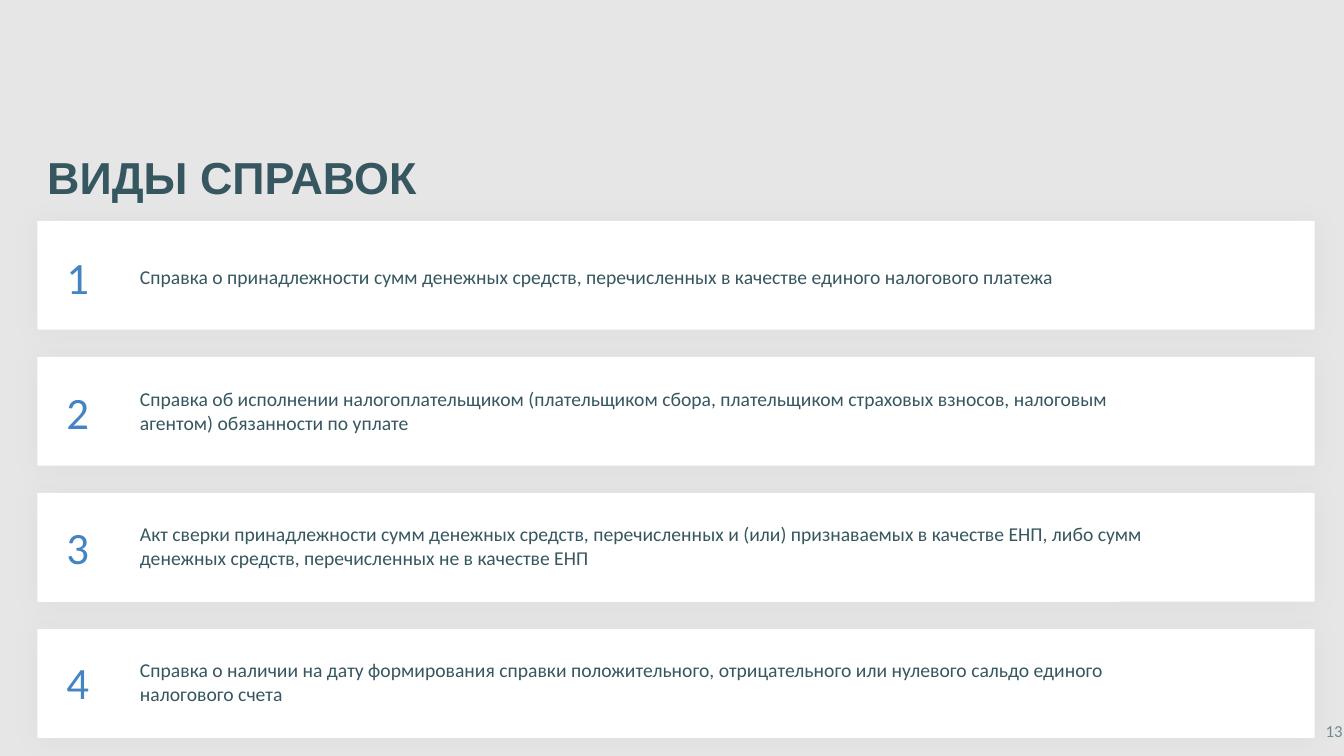
from lxml import etree
from pptx import Presentation
from pptx.dml.color import RGBColor
from pptx.enum.shapes import MSO_SHAPE
from pptx.enum.text import MSO_AUTO_SIZE
from pptx.oxml.ns import qn
from pptx.util import Inches, Pt

ROUNDED = MSO_SHAPE.ROUNDED_RECTANGLE
GROW = MSO_AUTO_SIZE.SHAPE_TO_FIT_TEXT

BACKGROUND = "E7E6E6"
WHITE = "FFFFFF"
SHADOW = "000000"
INK = "365760"
NUMBER_STOPS = ("4484C3", "5FBBD1")

TITLE = {"name": "Arial", "size": Pt(32), "bold": True}
NUMBER = {"name": "Calibri", "size": Pt(32)}
BODY = {"name": "Calibri", "size": Pt(14)}
PAGE = {"name": "Calibri", "size": Pt(12)}

CARD_TOP, CARD_STEP = 2.19, 1.35
NUMBER_TOP, NUMBER_STEP = 2.43, 1.34

CERTIFICATES = [
    ((1.29, 2.58, 10.86, 0.34),
     "Справка о принадлежности сумм денежных средств, перечисленных "
     "в качестве единого налогового платежа"),
    ((1.29, 3.79, 10.34, 0.57),
     "Справка об исполнении налогоплательщиком (плательщиком сбора, "
     "плательщиком страховых взносов, налоговым агентом) "
     "обязанности по уплате"),
    ((1.29, 5.13, 10.34, 0.57),
     "Акт сверки принадлежности сумм денежных средств, перечисленных "
     "и (или) признаваемых в качестве ЕНП, либо сумм денежных средств, "
     "перечисленных не в качестве ЕНП"),
    ((1.29, 6.48, 10.34, 0.57),
     "Справка о наличии на дату формирования справки положительного, "
     "отрицательного или нулевого сальдо единого налогового счета"),
]


def rgb(value):
    """Turn a hex string into a colour."""
    return RGBColor.from_string(value)


class Deck:
    """Holds the style and the current slide."""

    def __init__(self, prs):
        """Add a blank slide with the plain background."""
        self.slide = prs.slides.add_slide(prs.slide_layouts[6])
        fill = self.slide.background.fill
        fill.solid()
        fill.fore_color.rgb = rgb(BACKGROUND)

    def card(self, *box):
        """Draw a white card with a faint soft shadow."""
        sp = self.slide.shapes.add_shape(ROUNDED, *map(Inches, box))
        sp.adjustments[0] = 0.015
        sp.fill.solid()
        sp.fill.fore_color.rgb = rgb(WHITE)
        sp.line.fill.background()
        sp.shadow.inherit = False
        effects = sp.element.spPr.find(qn("a:effectLst"))
        shadow = etree.SubElement(effects, qn("a:outerShdw"), blurRad=str(Pt(20)),
                                  dist=str(Pt(1)), dir="6000000", rotWithShape="0")
        color = etree.SubElement(shadow, qn("a:srgbClr"), val=SHADOW)
        etree.SubElement(color, qn("a:alpha"), val="4000")

    def text(self, box, words, style, color=INK, wrap=True):
        """Write a text box and return its font."""
        sp = self.slide.shapes.add_textbox(*map(Inches, box))
        tf = sp.text_frame
        tf.word_wrap = wrap
        tf.auto_size = GROW
        r = tf.paragraphs[0].add_run()
        r.text = words
        for key, value in style.items():
            setattr(r.font, key, value)
        r.font.color.rgb = rgb(color)
        return r.font

    def number(self, box, words):
        """Write a large number with a vertical gradient."""
        fill = self.text(box, words, NUMBER, wrap=False).fill
        fill.gradient()
        fill.gradient_angle = 270
        for stop, color in zip(fill.gradient_stops, NUMBER_STOPS):
            stop.color.rgb = rgb(color)

    def page_number(self, box, words):
        """Write the translucent page number."""
        font = self.text(box, words, PAGE, wrap=False)
        color = font._element.find(f"{qn('a:solidFill')}/{qn('a:srgbClr')}")
        etree.SubElement(color, qn("a:alpha"), val="65000")


def main():
    """Build the slide and save it."""
    prs = Presentation()
    prs.slide_width, prs.slide_height = Inches(13.33), Inches(7.5)
    deck = Deck(prs)
    deck.text((0.37, 1.44, 4.39, 0.64), "ВИДЫ СПРАВОК", TITLE)
    for i, (box, words) in enumerate(CERTIFICATES):
        deck.card(0.37, CARD_TOP + i * CARD_STEP, 12.67, 1.08)
        deck.number((0.56, NUMBER_TOP + i * NUMBER_STEP, 0.47, 0.64), str(i + 1))
        deck.text(box, words, BODY)
    deck.page_number((13.05, 7.1, 0.39, 0.3), "13")
    prs.save("out.pptx")


if __name__ == "__main__":
    main()
